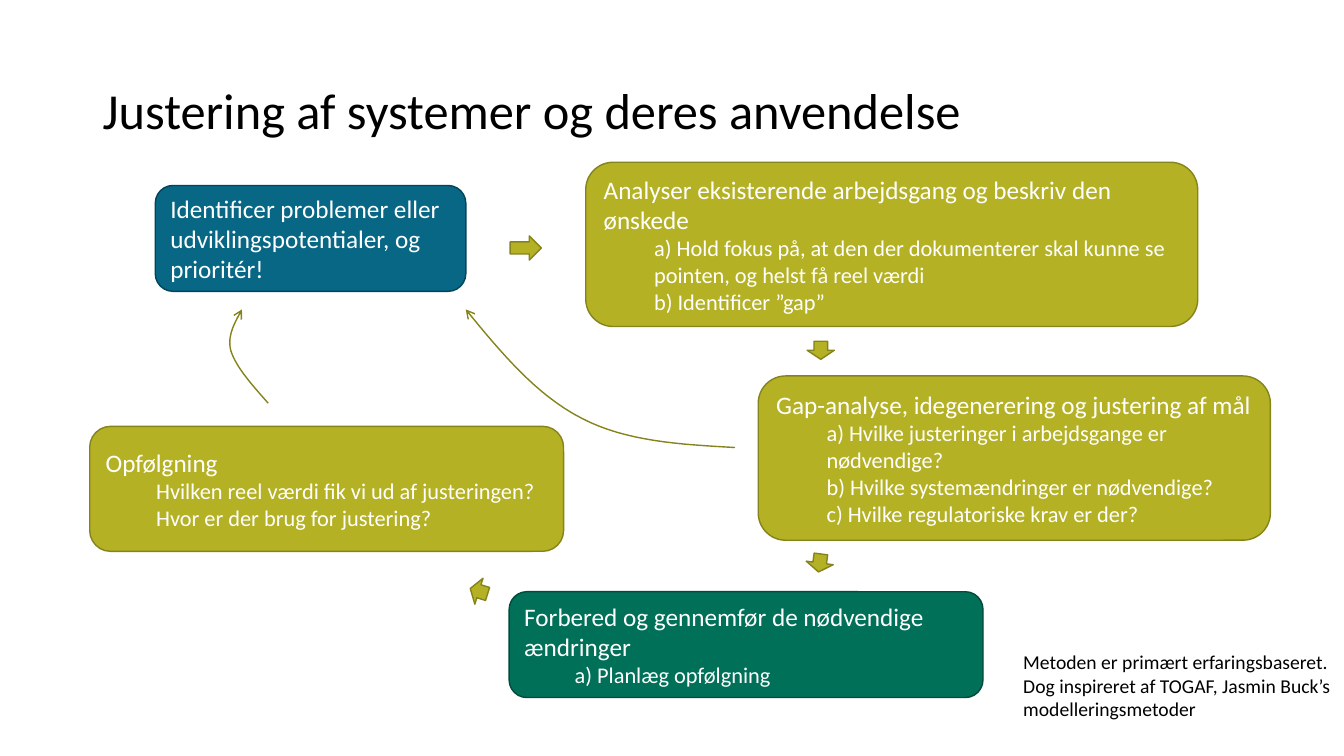
from dataclasses import dataclass

from lxml import etree
from pptx import Presentation
from pptx.dml.color import RGBColor
from pptx.enum.shapes import MSO_SHAPE
from pptx.enum.text import MSO_ANCHOR, PP_ALIGN
from pptx.oxml.ns import qn
from pptx.util import Pt

EMU_PER_PX = 9144  # 100 px to the inch
ROUNDED = MSO_SHAPE.ROUNDED_RECTANGLE
ARROW = MSO_SHAPE.RIGHT_ARROW
MIDDLE, TOP = MSO_ANCHOR.MIDDLE, MSO_ANCHOR.TOP
LEFT = PP_ALIGN.LEFT


@dataclass(frozen=True)
class Theme:
    font: str = "Calibri"
    title_size: int = 36
    step_size: int = 18
    detail_size: int = 16
    note_size: int = 14
    outline: int = 1
    indent: int = 50
    ink: str = "000000"
    paper: str = "FFFFFF"
    blue: tuple = ("076785", "044458")
    olive: tuple = ("B4B124", "85831B")
    green: tuple = ("017058", "014B3B")


THEME = Theme()

STEPS = [
    ((154, 184, 308, 105), THEME.blue,
     "Identificer problemer eller udviklingspotentialer, og prioritér!", []),
    ((581, 161, 607, 163), THEME.olive,
     "Analyser eksisterende arbejdsgang og beskriv den ønskede",
     ["a) Hold fokus på, at den der dokumenterer skal kunne se pointen, "
      "og helst få reel værdi",
      "b) Identificer ”gap”"]),
    ((752, 373, 508, 163), THEME.olive,
     "Gap-analyse, idegenerering og justering af mål",
     ["a) Hvilke justeringer i arbejdsgange er nødvendige?",
      "b) Hvilke systemændringer er nødvendige?",
      "c) Hvilke regulatoriske krav er der?"]),
    ((505, 587, 470, 105), THEME.green,
     "Forbered og gennemfør de nødvendige ændringer",
     ["a) Planlæg opfølgning"]),
    ((89, 423, 470, 124), THEME.olive,
     "Opfølgning",
     ["Hvilken reel værdi fik vi ud af justeringen? "
      "Hvor er der brug for justering?"]),
]

# Box before rotation, then degrees clockwise
STEP_ARROWS = [
    ((506, 234, 31, 24), 0),
    ((805, 334, 18, 27), 90),
    ((804, 545, 18, 27), 97.5),
    ((466, 573, 18, 27), 197.5),
]

# Start point, then two control points and an end point for each bend
FEEDBACK_CURVES = [
    [(729, 444), (675, 441), (621, 438), (577, 415),
     (532, 392), (497, 350), (462, 307)],
    [(266, 400), (250, 382), (234, 364), (229, 348),
     (225, 333), (233, 320), (240, 307)],
]


def px(*lengths):
    return [round(length * EMU_PER_PX) for length in lengths]


def rgb(colour):
    return RGBColor.from_string(colour)


def add_text(paragraph, text, size, colour):
    paragraph.alignment = LEFT
    run = paragraph.add_run()
    run.text = text
    run.font.name = THEME.font
    run.font.size = Pt(size)
    run.font.color.rgb = rgb(colour)


def set_outline(shape, colour):
    shape.shadow.inherit = False
    shape.line.color.rgb = rgb(colour)
    shape.line.width = Pt(THEME.outline)


def add_filled(slide, kind, box, colours):
    fill, outline = colours
    shape = slide.shapes.add_shape(kind, *px(*box))
    shape.fill.solid()
    shape.fill.fore_color.rgb = rgb(fill)
    set_outline(shape, outline)
    return shape


def add_label(slide, box, text, size, anchor):
    label = slide.shapes.add_textbox(*px(*box))
    frame = label.text_frame
    frame.word_wrap = True
    frame.vertical_anchor = anchor
    add_text(frame.paragraphs[0], text, size, THEME.ink)
    return frame


def add_step(slide, box, colours, heading, details):
    frame = add_filled(slide, ROUNDED, box, colours).text_frame
    frame.word_wrap = True
    frame.vertical_anchor = MIDDLE
    add_text(frame.paragraphs[0], heading, THEME.step_size, THEME.paper)
    for detail in details:
        paragraph = frame.add_paragraph()
        paragraph.level = 1
        properties = paragraph._p.get_or_add_pPr()
        properties.set("marL", str(px(THEME.indent)[0]))
        properties.set("indent", "0")
        add_text(paragraph, detail, THEME.detail_size, THEME.paper)


def bezier_points(knots, steps=16):
    """Points along a chain of cubic curves that share their end points."""
    points = []
    for first in range(0, len(knots) - 1, 3):
        bend = knots[first:first + 4]
        for step in range(1, steps + 1):
            t = step / steps
            weights = ((1 - t) ** 3, 3 * t * (1 - t) ** 2,
                       3 * t ** 2 * (1 - t), t ** 3)
            points.append(tuple(
                sum(weight * knot[axis] for weight, knot in zip(weights, bend))
                for axis in (0, 1)))
    return points


def add_feedback_curve(slide, knots):
    builder = slide.shapes.build_freeform(*px(*knots[0]), scale=1.0)
    builder.add_line_segments(
        [px(*point) for point in bezier_points(knots)], close=False)
    curve = builder.convert_to_shape()
    curve.fill.background()
    set_outline(curve, THEME.olive[1])
    etree.SubElement(curve.line._get_or_add_ln(), qn("a:tailEnd"), type="arrow")


def add_cycle(slide):
    for step in STEPS:
        add_step(slide, *step)
    for box, angle in STEP_ARROWS:
        add_filled(slide, ARROW, box, THEME.olive).rotation = angle
    for knots in FEEDBACK_CURVES:
        add_feedback_curve(slide, knots)


def main():
    deck = Presentation()
    deck.slide_width, deck.slide_height = px(1333, 750)
    slide = deck.slides.add_slide(deck.slide_layouts[6])
    title = add_label(slide, (92, 40, 1150, 145),
                      "Justering af systemer og deres anvendelse",
                      THEME.title_size, MIDDLE)
    title.paragraphs[0].line_spacing = 0.9
    add_cycle(slide)
    add_label(slide, (1005, 640, 342, 81),
              "Metoden er primært erfaringsbaseret. Dog inspireret af TOGAF, "
              "Jasmin Buck’s modelleringsmetoder", THEME.note_size, TOP)
    deck.save("out.pptx")


if __name__ == "__main__":
    main()
